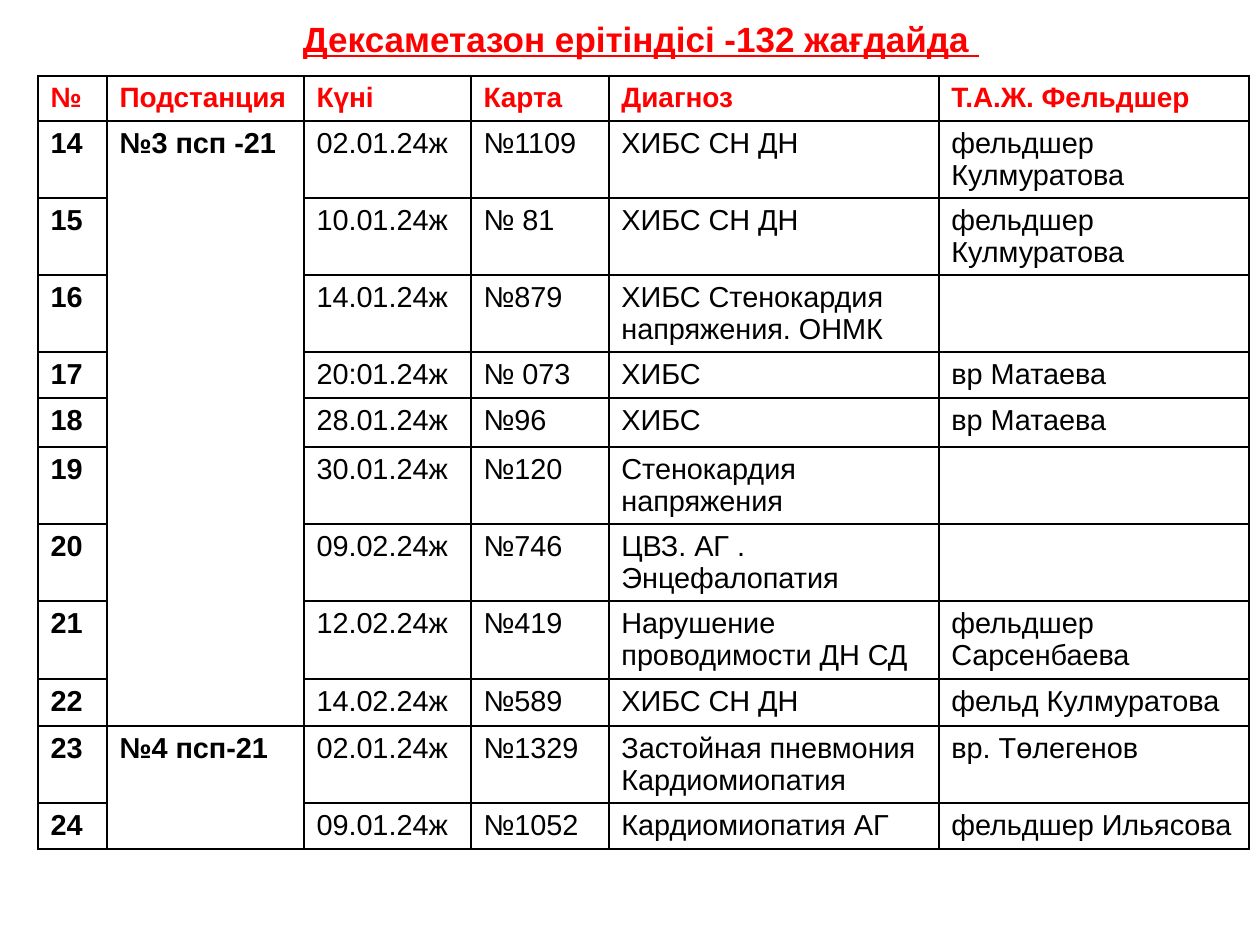
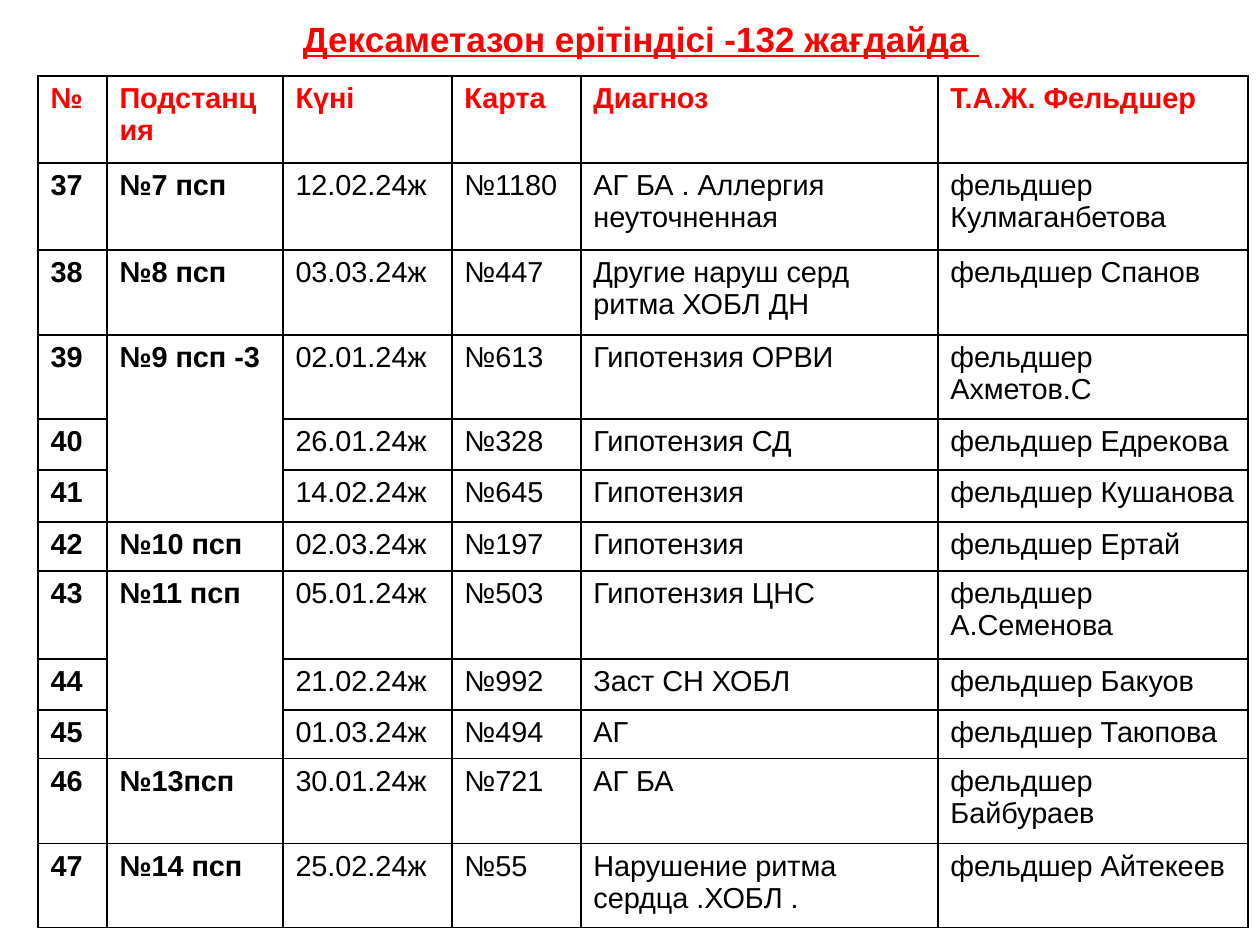
from lxml import etree
from pptx import Presentation
from pptx import util as u
from pptx.dml.color import RGBColor
from pptx.enum import text
from pptx.oxml import ns

RED = RGBColor(0xFF, 0x00, 0x00)
BLACK = RGBColor(0x00, 0x00, 0x00)
FONT = "Arial"
PX_PER_INCH = 126
BODY_SIZE = 16.5
TITLE = "Дексаметазон ерітіндісі -132 жағдайда "
HEADINGS = ("№", "Подстанция", "Күні", "Карта", "Диагноз", "Т.А.Ж. Фельдшер")

CASES_14_24 = [
    ("№3 псп -21", "02.01.24ж", "№1109", "ХИБС СН ДН", "фельдшер Кулмуратова"),
    ("", "10.01.24ж", "№ 81", "ХИБС СН ДН", "фельдшер Кулмуратова"),
    ("", "14.01.24ж", "№879", "ХИБС Стенокардия напряжения. ОНМК", ""),
    ("", "20:01.24ж", "№ 073", "ХИБС", "вр Матаева"),
    ("", "28.01.24ж", "№96", "ХИБС", "вр Матаева"),
    ("", "30.01.24ж", "№120", "Стенокардия напряжения", ""),
    ("", "09.02.24ж", "№746", "ЦВЗ. АГ .\nЭнцефалопатия", ""),
    ("", "12.02.24ж", "№419", "Нарушение проводимости ДН СД", "фельдшер Сарсенбаева"),
    ("", "14.02.24ж", "№589", "ХИБС СН ДН", "фельд Кулмуратова"),
    ("№4 псп-21", "02.01.24ж", "№1329", "Застойная пневмония Кардиомиопатия", "вр. Төлегенов"),
    ("", "09.01.24ж", "№1052", "Кардиомиопатия АГ", "фельдшер Ильясова"),
]
CASES_37_47 = [
    ("№7 псп", "12.02.24ж", "№1180", "АГ БА . Аллергия неуточненная", "фельдшер Кулмаганбетова"),
    ("№8 псп", "03.03.24ж", "№447", "Другие наруш серд ритма ХОБЛ ДН", "фельдшер Спанов"),
    ("№9 псп -3", "02.01.24ж", "№613", "Гипотензия ОРВИ", "фельдшер Ахметов.С"),
    ("", "26.01.24ж", "№328", "Гипотензия СД", "фельдшер Едрекова"),
    ("", "14.02.24ж", "№645", "Гипотензия", "фельдшер Кушанова"),
    ("№10 псп", "02.03.24ж", "№197", "Гипотензия", "фельдшер Ертай"),
    ("№11 псп", "05.01.24ж", "№503", "Гипотензия ЦНС", "фельдшер А.Семенова"),
    ("", "21.02.24ж", "№992", "Заст СН ХОБЛ", "фельдшер Бакуов"),
    ("", "01.03.24ж", "№494", "АГ", "фельдшер Таюпова"),
    ("№13псп", "30.01.24ж", "№721", "АГ БА", "фельдшер Байбураев"),
    ("№14 псп", "25.02.24ж", "№55", "Нарушение ритма сердца .ХОБЛ .", "фельдшер Айтекеев"),
]


def px(length):
    """Turn pixels into EMU."""
    return u.Emu(round(length * 914400 / PX_PER_INCH))


def style_text(frame, size, color, bold, underline=None):
    """Format every run of a text frame."""
    for para in frame.paragraphs:
        for span in para.runs:
            font = span.font
            font.name, font.size = FONT, u.Pt(size)
            font.bold, font.underline = bold, underline
            font.color.rgb = color


def add_title(page):
    """Place the underlined red title above the table."""
    box = page.shapes.title
    box.left, box.top, box.width, box.height = px(74), px(0), px(1134), px(77)
    frame = box.text_frame
    frame.text = TITLE
    frame.word_wrap = True
    frame.auto_size = text.MSO_AUTO_SIZE.NONE
    frame.vertical_anchor = text.MSO_ANCHOR.MIDDLE
    frame.paragraphs[0].alignment = text.PP_ALIGN.CENTER
    style_text(frame, 20, RED, True, True)


def add_borders(cell):
    """Draw a thin black line on each side of a cell."""
    properties = cell._tc.get_or_add_tcPr()
    for position, side in enumerate(("lnL", "lnR", "lnT", "lnB")):
        line = etree.Element(ns.qn(f"a:{side}"), w=str(u.Pt(1)))
        fill = etree.SubElement(line, ns.qn("a:solidFill"))
        etree.SubElement(fill, ns.qn("a:srgbClr"), val=str(BLACK))
        properties.insert(position, line)


def merge_stations(table, cases):
    """Merge each station cell with the unnamed cells below it."""
    starts = [row for row, case in enumerate(cases, 1) if case[0]]
    ends = [start - 1 for start in starts[1:]] + [len(cases)]
    for start, end in zip(starts, ends):
        if end > start:
            table.cell(start, 1).merge(table.cell(end, 1))


def add_case_table(page, first_number, cases, widths, heights, heading_size):
    """Add the numbered list of cases under its red headings."""
    rows = [HEADINGS] + [(str(number), *case) for number, case in enumerate(cases, first_number)]
    frame = page.shapes.add_table(len(rows), len(HEADINGS), px(38), px(76),
                                  px(sum(widths)), px(sum(heights)))
    table = frame.table
    for column, width in zip(table.columns, widths):
        column.width = px(width)
    for row, height in zip(table.rows, heights):
        row.height = px(height)
    for row_index, values in enumerate(rows):
        heading = row_index == 0
        for column_index, value in enumerate(values):
            cell = table.cell(row_index, column_index)
            cell.text_frame.text = value
            cell.fill.background()
            add_borders(cell)
            style_text(cell.text_frame, heading_size if heading else BODY_SIZE,
                       RED if heading else BLACK, heading or column_index < 2)
    merge_stations(table, cases)


def main():
    """Build both pages of the case list."""
    deck = Presentation()
    deck.slide_width, deck.slide_height = u.Inches(10), u.Inches(7.5)
    pages = [
        (14, CASES_14_24, (69, 197, 167, 138, 330, 310),
         (45, 77, 77, 77, 46, 49, 77, 77, 78, 47, 77, 46), 16),
        (37, CASES_37_47, (69, 176, 169, 129, 357, 310),
         (87, 87, 85, 84, 51, 52, 49, 88, 51, 49, 85, 84), BODY_SIZE),
    ]
    for contents in pages:
        page = deck.slides.add_slide(deck.slide_layouts[5])
        add_title(page)
        add_case_table(page, *contents)
    deck.save("out.pptx")


if __name__ == "__main__":
    main()
